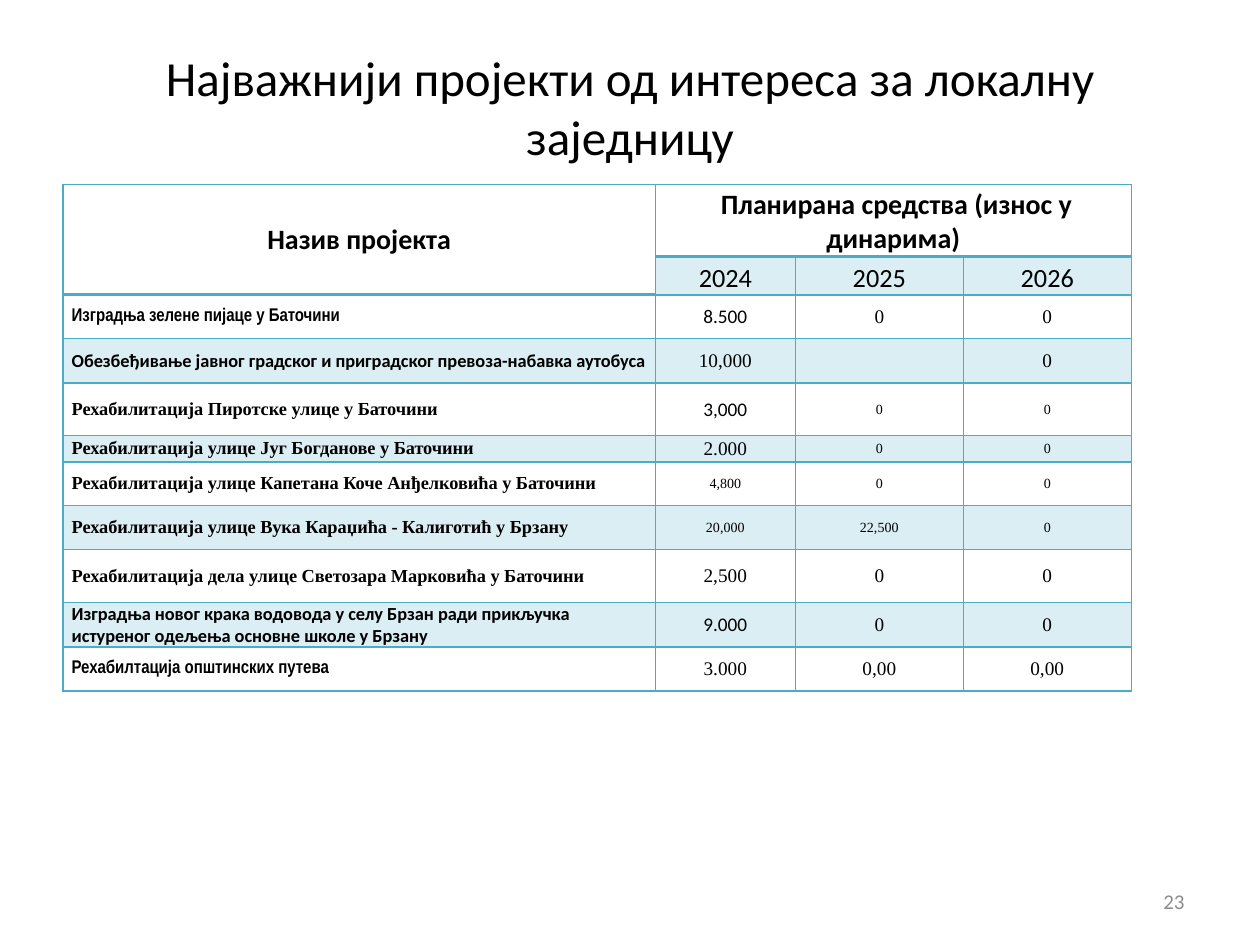
from lxml import etree
from pptx import Presentation
from pptx import util as u
from pptx.dml.color import RGBColor
from pptx.enum import text
from pptx.oxml.ns import qn

BLACK = RGBColor(0x00, 0x00, 0x00)
GREY = RGBColor(0x8C, 0x8C, 0x8C)
TEAL = RGBColor(0x4B, 0xAC, 0xC6)
PALE = RGBColor(0xDB, 0xEE, 0xF4)

CALIBRI, TIMES, NARROW = "Calibri", "Times New Roman", "Arial Narrow"
LEFT, CENTER, RIGHT = text.PP_ALIGN.LEFT, text.PP_ALIGN.CENTER, text.PP_ALIGN.RIGHT
MIDDLE, BOTTOM = text.MSO_ANCHOR.MIDDLE, text.MSO_ANCHOR.BOTTOM

COLUMNS = [338.5, 80, 96, 96]
ROWS = [41, 22, 25, 25.5, 30, 15, 25, 25, 30.5, 25.5, 25]
HEADING = {"name": CALIBRI, "size": u.Pt(16), "bold": True}
YEAR = {"name": CALIBRI, "size": u.Pt(15), "bold": False}
YEARS = ["2024", "2025", "2026"]

PROJECTS = [
    ("Изградња зелене пијаце у Баточини", NARROW,
     [("8.500", CALIBRI, 11), ("0", TIMES, 11), ("0", TIMES, 11)]),
    ("Обезбеђивање јавног градског и приградског превоза-набавка аутобуса", CALIBRI,
     [("10,000", TIMES, 11), ("", TIMES, 11), ("0", TIMES, 11)]),
    ("Рехабилитација Пиротске улице у Баточини", TIMES,
     [("3,000", CALIBRI, 11), ("0", TIMES, 8), ("0", TIMES, 8)]),
    ("Рехабилитација улице Југ Богданове у Баточини", TIMES,
     [("2.000", TIMES, 11), ("0", TIMES, 8), ("0", TIMES, 8)]),
    ("Рехабилитација улице Капетана Коче Анђелковића у Баточини", TIMES,
     [("4,800", TIMES, 8), ("0", TIMES, 8), ("0", TIMES, 8)]),
    ("Рехабилитација улице Вука Караџића - Калиготић у Брзану", TIMES,
     [("20,000", TIMES, 8), ("22,500", TIMES, 8), ("0", TIMES, 8)]),
    ("Рехабилитација дела улице Светозара Марковића у Баточини", TIMES,
     [("2,500", TIMES, 11), ("0", TIMES, 11), ("0", TIMES, 11)]),
    ("Изградња новог крака водовода у селу Брзан ради прикључка "
     "истуреног одељења основне школе у Брзану", CALIBRI,
     [("9.000", CALIBRI, 11), ("0", TIMES, 11), ("0", TIMES, 11)]),
    ("Рехабилтација општинских путева", NARROW,
     [("3.000", TIMES, 11), ("0,00", TIMES, 11), ("0,00", TIMES, 11)]),
]


def apply(target, values):
    """Set each attribute of target from a dict of values."""
    for name, value in values.items():
        setattr(target, name, value)


def write(para, words, align, style, color=BLACK):
    """Put one formatted span into a paragraph."""
    para.alignment = align
    if words:
        span = para.add_run()
        span.text = words
        apply(span.font, style)
        span.font.color.rgb = color


def add_text(page, bounds, words, align, style, color=BLACK):
    """Add a vertically centred text box."""
    box = page.shapes.add_textbox(*(u.Pt(length) for length in bounds))
    apply(box.text_frame, {"word_wrap": True, "vertical_anchor": MIDDLE})
    write(box.text_frame.paragraphs[0], words, align, style, color)


def draw_borders(cell, top, bottom):
    """Draw the four cell borders, with top and bottom widths in points."""
    properties = cell._tc.get_or_add_tcPr()
    for side, width in (("L", 1), ("R", 1), ("T", top), ("B", bottom)):
        line = etree.SubElement(properties, qn(f"a:ln{side}"), w=str(int(u.Pt(width))))
        fill = etree.SubElement(line, qn("a:solidFill"))
        etree.SubElement(fill, qn("a:srgbClr"), val=str(TEAL))


def fill_cell(cell, words, align, style, anchor=MIDDLE):
    """Write a cell's text and set its margins and anchor."""
    apply(cell, {"margin_left": u.Pt(5), "margin_right": u.Pt(5), "margin_top": 0,
                 "margin_bottom": 0, "vertical_anchor": anchor})
    write(cell.text_frame.paragraphs[0], words, align, style)


def style_grid(table):
    """Set sizes, borders and shading across the table."""
    apply(table, {"first_row": False, "horz_banding": False})
    for column, width in zip(table.columns, COLUMNS):
        column.width = u.Pt(width)
    for row, height in zip(table.rows, ROWS):
        row.height = u.Pt(height)
    for r in range(len(ROWS)):
        for c in range(len(COLUMNS)):
            cell = table.cell(r, c)
            first = 2 if c == 0 else 1
            draw_borders(cell, 2 if r == first else 1,
                         2 if r == first - 1 or r == c == 0 else 1)
            if r % 2 and (r, c) != (1, 0):
                cell.fill.solid()
                cell.fill.fore_color.rgb = PALE
            else:
                cell.fill.background()


def add_projects(page):
    """Add the table of projects and planned funds."""
    frame = page.shapes.add_table(len(ROWS), len(COLUMNS), u.Pt(36), u.Pt(105.5),
                                  u.Pt(sum(COLUMNS)), u.Pt(sum(ROWS)))
    table = frame.table
    style_grid(table)
    table.cell(0, 0).merge(table.cell(1, 0))
    table.cell(0, 1).merge(table.cell(0, 3))
    fill_cell(table.cell(0, 0), "Назив пројекта", CENTER, HEADING)
    fill_cell(table.cell(0, 1), " Планирана средства (износ у динарима)",
              CENTER, HEADING, BOTTOM)
    for c, year in enumerate(YEARS, 1):
        fill_cell(table.cell(1, c), year, CENTER, YEAR, BOTTOM)
    for r, (project, font, amounts) in enumerate(PROJECTS, 2):
        fill_cell(table.cell(r, 0), project, LEFT,
                  {"name": font, "size": u.Pt(10.5), "bold": True})
        for c, (amount, face, size) in enumerate(amounts, 1):
            fill_cell(table.cell(r, c), amount, CENTER,
                      {"name": face, "size": u.Pt(size), "bold": False})


def main():
    """Build the slide and save it."""
    deck = Presentation()
    apply(deck, {"slide_width": u.Pt(720), "slide_height": u.Pt(540)})
    page = deck.slides.add_slide(deck.slide_layouts[6])
    add_text(page, (36, 21.6, 648, 78.5),
             "Најважнији пројекти од интереса за локалну заједницу",
             CENTER, {"name": CALIBRI, "size": u.Pt(28)})
    add_text(page, (516, 500.5, 168, 28.75), "23", RIGHT,
             {"name": CALIBRI, "size": u.Pt(12)}, GREY)
    add_projects(page)
    deck.save("out.pptx")


if __name__ == "__main__":
    main()
